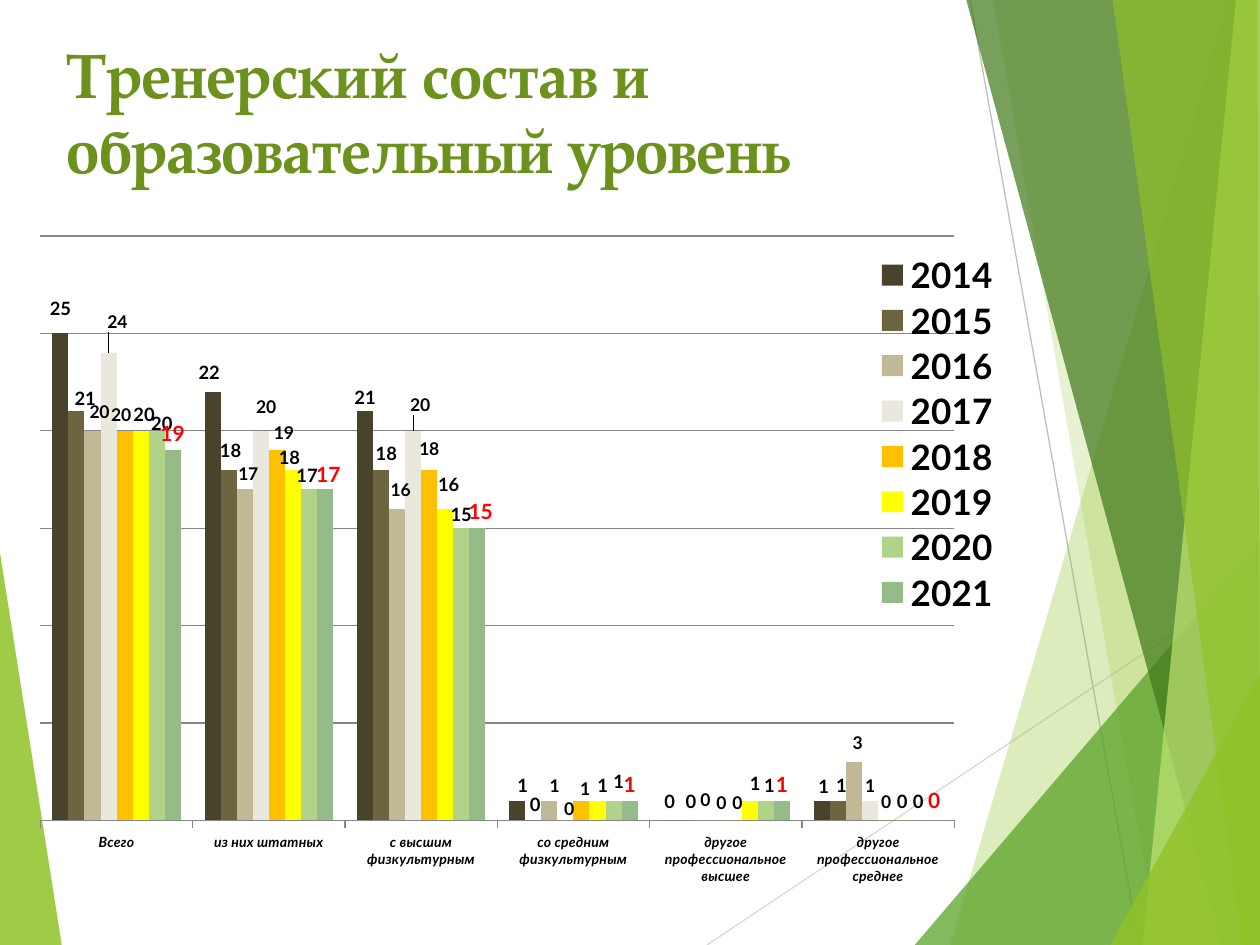
from dataclasses import dataclass

from lxml import etree
from pptx import Presentation
from pptx.chart.data import CategoryChartData
from pptx.dml.color import RGBColor
from pptx.enum.chart import XL_CHART_TYPE, XL_LABEL_POSITION, XL_LEGEND_POSITION, XL_TICK_MARK
from pptx.enum.shapes import MSO_CONNECTOR
from pptx.enum.text import MSO_ANCHOR, PP_ALIGN
from pptx.oxml.ns import qn
from pptx.util import Pt

COLUMNS = XL_CHART_TYPE.COLUMN_CLUSTERED
OUTSIDE = XL_LABEL_POSITION.OUTSIDE_END
LEGEND_RIGHT = XL_LEGEND_POSITION.RIGHT
TICK_NONE, TICK_OUT = XL_TICK_MARK.NONE, XL_TICK_MARK.OUTSIDE
STRAIGHT = MSO_CONNECTOR.STRAIGHT
TOP, LEFT = MSO_ANCHOR.TOP, PP_ALIGN.LEFT
TITLE_ONLY = 5


@dataclass(frozen=True)
class Theme:
    title_font: str = "TeX Gyre Pagella"
    body_font: str = "Lato"
    title: str = "6C921D"
    text: str = "000000"
    latest: str = "FF0000"
    grid: str = "868686"
    lime: str = "90C226"
    green: str = "54A021"
    forest: str = "3F7819"
    pale: str = "C0E474"
    title_size: float = 36
    chart_size: float = 18
    legend_size: float = 20
    category_size: float = 8


THEME = Theme()
PAGE = (0, 0, 720, 540)
TITLE_BOX = (31, 16.5, 584, 75)
CHART_BOX = (-8.6, 111.6, 689, 401)

# Facets from back to front: colour, opacity in percent, corners
FACETS = [
    (THEME.lime, 85, [(0, 316), (35.3, 540), (0, 540)]),
    (THEME.lime, 30, [(702, 0), (543, 540), (720, 540), (720, 0)]),
    (THEME.lime, 20, [(567.4, 0), (661.7, 540), (720, 540), (720, 0)]),
    (THEME.green, 72, [(522.7, 540), (720, 309), (720, 540)]),
    (THEME.forest, 70, [(552.2, 0), (698.4, 540), (720, 540), (720, 0)]),
    (THEME.pale, 70, [(706.3, 0), (653, 540), (720, 540), (720, 0)]),
    (THEME.lime, 65, [(635.8, 0), (709.9, 540), (720, 540), (718.6, 0)]),
    (THEME.lime, 80, [(634.3, 540), (720, 385.2), (720, 540)]),
]
RAYS = [("D9D9D9", (404, 540, 720, 329)), ("BFBFBF", (554.4, 0, 651, 540))]

CATEGORIES = ["Всего", "из них штатных", "с высшим физкультурным",
              "со средним физкультурным", "другое профессиональное высшее",
              "другое профессиональное среднее"]
# Year, values, fill, tint in percent, label size, label colour, label shifts in points
SERIES = [
    ("2014", (25, 22, 21, 1, 0, 1), "48432A", 100, 10.5, THEME.text,
     [(0, -5), (-2, -2), (0, 1), (3, 0), (0, -2), (1, 1)]),
    ("2015", (21, 18, 18, 0, 0, 1), "6D6540", 100, 10.5, THEME.text,
     [(5, 2), (1, -2), (3, 0), (1, 0), (3, -2), (2, 0)]),
    ("2016", (20, 17, 16, 1, 0, 3), "C1B995", 100, 10, THEME.text,
     [(4, -2), (2, 0), (2, -2), (3, 0), (2, -3), (2, -2)]),
    ("2017", (24, 20, 20, 0, 0, 1), "EAE8DC", 100, 10, THEME.text,
     [(5, -9), (3, -5), (4, -6), (2, 2), (2, -1), (0, 0)]),
    ("2018", (20, 19, 18, 1, 0, 0), "FFC000", 100, 10, THEME.text,
     [(-2, 0), (4, -1), (0, -3), (2, 2), (2, -1), (0, -2)]),
    ("2019", (20, 18, 16, 1, 1, 0), "FFFF00", 100, 10.5, THEME.text,
     [(2, 0), (-2, 2), (2, -5), (3, 0), (3, -1), (0, -2)]),
    ("2020", (20, 17, 15, 1, 1, 0), THEME.lime, 77, 10.5, THEME.text,
     [(3, 5), (-1, 1), (0, 1), (3, -2), (2, 0), (0, -2)]),
    ("2021", (19, 17, 15, 1, 1, 0), THEME.green, 77, 12, THEME.latest,
     [(0, 0), (2, 1), (2, 0), (0, 0), (0, 0), (0, -2)]),
]


def style_font(font, size, color=THEME.text, name=THEME.body_font, bold=True):
    font.size, font.bold, font.name = Pt(size), bold, name
    font.color.rgb = RGBColor.from_string(color)


def fill_solid(fill, color, effect=None, percent=100):
    """Fill with a colour, with an optional alpha or tint."""
    fill.solid()
    fill.fore_color.rgb = RGBColor.from_string(color)
    if percent < 100:
        node = fill._xPr.find(".//" + qn("a:srgbClr"))
        etree.SubElement(node, qn("a:" + effect), val=str(percent * 1000))


def manual_layout(**settings):
    layout = etree.Element(qn("c:layout"))
    manual = etree.SubElement(layout, qn("c:manualLayout"))
    for key, value in settings.items():
        etree.SubElement(manual, qn("c:" + key), val=str(value))
    return layout


def place_part(parent, index, layout):
    """Give a chart part its manual layout, replacing any automatic one."""
    for old in parent.findall(qn("c:layout")):
        parent.remove(old)
    parent.insert(index, layout)


def add_decoration(page, box):
    left, top = box[:2]

    def add_facet(color, opacity, corners):
        points = [(Pt(left + x), Pt(top + y)) for x, y in corners]
        builder = page.shapes.build_freeform(*points[0])
        builder.add_line_segments(points[1:], close=True)
        facet = builder.convert_to_shape()
        facet.shadow.inherit = False
        facet.line.fill.background()
        fill_solid(facet.fill, color, "alpha", opacity)

    # Left wedge, thin rays, then the right-hand facets
    add_facet(*FACETS[0])
    for color, (x1, y1, x2, y2) in RAYS:
        ray = page.shapes.add_connector(STRAIGHT, Pt(left + x1), Pt(top + y1),
                                        Pt(left + x2), Pt(top + y2))
        ray.line.width = Pt(0.75)
        ray.line.color.rgb = RGBColor.from_string(color)
        etree.SubElement(ray._element.spPr, qn("a:effectLst"))
    for facet in FACETS[1:]:
        add_facet(*facet)


def add_title(page, box):
    title = page.shapes.title
    title.left, title.top, title.width, title.height = map(Pt, box)
    page.shapes._spTree.append(title._element)  # in front of the facets
    frame = title.text_frame
    frame.word_wrap, frame.vertical_anchor = True, TOP
    para = frame.paragraphs[0]
    para.alignment = LEFT
    span = para.add_run()
    span.text = "Тренерский состав и образовательный уровень"
    style_font(span.font, THEME.title_size, THEME.title, THEME.title_font)


def style_series(series, fill, tint, size, color, shifts, box):
    fill_solid(series.format.fill, fill, "tint", tint)
    series.invert_if_negative = False
    labels = series.data_labels
    labels.show_value, labels.position = True, OUTSIDE
    style_font(labels.font, size, color)
    for index in range(len(shifts)):
        label = series.points[index].data_label
        style_font(label.font, size, color)
        label.position = OUTSIDE
    for node, (dx, dy) in zip(labels._element.findall(qn("c:dLbl")), shifts):
        place_part(node, 1, manual_layout(x=round(dx / box[2], 4), y=round(dy / box[3], 4)))


def add_staff_chart(page, box):
    data = CategoryChartData()
    data.categories = CATEGORIES
    for year, values, *_ in SERIES:
        data.add_series(year, values)
    chart = page.shapes.add_chart(COLUMNS, *map(Pt, box), data).chart
    style_font(chart.font, THEME.chart_size, bold=False)
    chart.has_title = False
    plot = chart.plots[0]
    plot.gap_width, plot.overlap, plot.vary_by_categories = 150, 0, False
    place_part(plot._element.getparent(), 0, manual_layout(
        layoutTarget="inner", xMode="edge", yMode="edge", x=0.046, y=0.058, w=0.758, h=0.833))

    # Axes and gridlines
    category, value = chart.category_axis, chart.value_axis
    style_font(category.tick_labels.font, THEME.category_size)
    category.tick_labels.font.italic = True
    category.major_tick_mark = TICK_OUT
    value.minimum_scale, value.maximum_scale, value.major_unit = 0, 30, 5
    value.major_tick_mark = TICK_NONE
    value.has_major_gridlines = True
    value.visible = False
    for line in (category.format.line, value.major_gridlines.format.line):
        line.color.rgb = RGBColor.from_string(THEME.grid)
        line.width = Pt(0.75)

    # Legend over the right end of the plot
    chart.has_legend = True
    legend = chart.legend
    legend.position, legend.include_in_layout = LEGEND_RIGHT, True
    style_font(legend.font, THEME.legend_size)
    place_part(legend._element, 1, manual_layout(
        xMode="edge", yMode="edge", x=0.73, y=0.08, w=0.12, h=0.52))

    for series, (_, _, *style) in zip(plot.series, SERIES):
        style_series(series, *style, box)


def main():
    deck = Presentation()
    deck.slide_width, deck.slide_height = Pt(PAGE[2]), Pt(PAGE[3])
    page = deck.slides.add_slide(deck.slide_layouts[TITLE_ONLY])
    add_decoration(page, PAGE)
    add_title(page, TITLE_BOX)
    add_staff_chart(page, CHART_BOX)
    deck.save("out.pptx")


if __name__ == "__main__":
    main()
